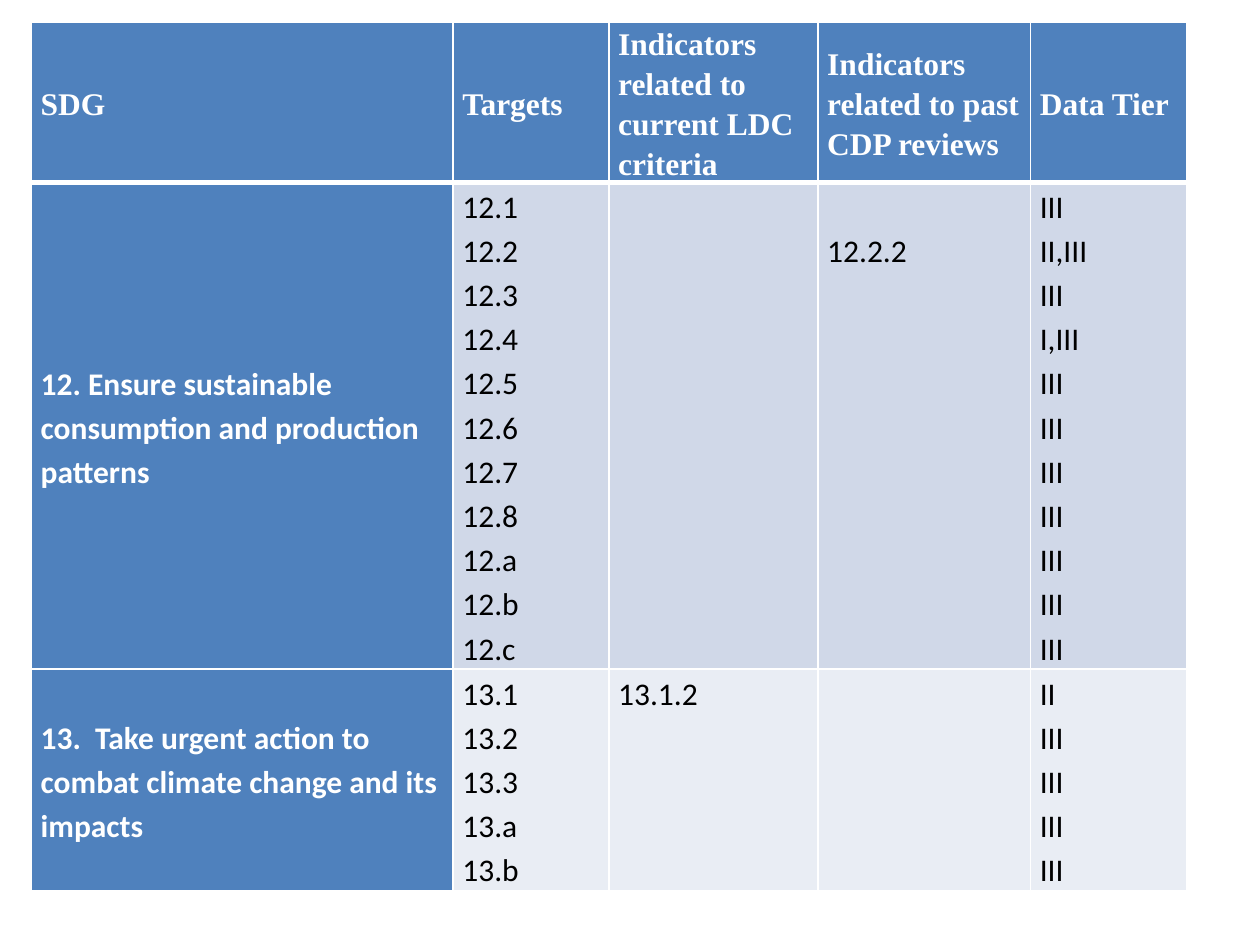
from dataclasses import dataclass

from lxml import etree
from pptx import Presentation
from pptx.dml.color import RGBColor
from pptx.enum import text
from pptx.oxml import ns
from pptx.util import Pt


@dataclass(frozen=True)
class Theme:
    accent: str = "4F81BD"
    bands: tuple = ("D0D8E8", "E9EDF4")
    light: str = "FFFFFF"
    dark: str = "000000"
    head_font: str = "Times New Roman"
    body_font: str = "Calibri"
    size: float = 18
    leading: float = 1.15
    inset: float = 5.3
    rule: float = 1
    head_rule: float = 3


THEME = Theme()
BODY_LINE = 25.3  # height of one body line at THEME.size and THEME.leading
COLUMN_WIDTHS = (241, 89, 119.5, 121.5, 89)
HEADER_HEIGHT = 91

HEADERS = ("SDG", "Targets", "Indicators related to current LDC criteria",
           "Indicators related to past CDP reviews", "Data Tier")
# goal, targets, current indicators, past indicators, data tiers;
# indicators are keyed by the line they stand on
GOALS = (
    ("12. Ensure sustainable consumption and production patterns",
     [f"12.{n}" for n in "12345678abc"], {}, {1: "12.2.2"},
     ["III", "II,III", "III", "I,III"] + ["III"] * 7),
    ("13.  Take urgent action to combat climate change and its impacts",
     [f"13.{n}" for n in "123ab"], {0: "13.1.2"}, {},
     ["II"] + ["III"] * 4),
)


def set_borders(cell, top, bottom):
    """Draw light rules on all four sides, ahead of the fill in the XML."""
    tc_pr = cell._tc.get_or_add_tcPr()
    widths = {"lnL": THEME.rule, "lnR": THEME.rule, "lnT": top, "lnB": bottom}
    for i, (tag, width) in enumerate(widths.items()):
        ln = etree.Element(ns.qn(f"a:{tag}"), w=str(Pt(width)))
        fill = etree.SubElement(ln, ns.qn("a:solidFill"))
        etree.SubElement(fill, ns.qn("a:srgbClr"), val=THEME.light)
        tc_pr.insert(i, ln)


def style_cell(cell, lines, fill, font, heading, first_line=0,
               top=THEME.rule, bottom=THEME.rule):
    cell.fill.solid()
    cell.fill.fore_color.rgb = RGBColor.from_string(fill)
    set_borders(cell, top, bottom)
    cell.margin_left = cell.margin_right = Pt(THEME.inset)
    cell.margin_top, cell.margin_bottom = Pt(first_line * BODY_LINE), 0
    cell.vertical_anchor = (text.MSO_ANCHOR.MIDDLE if heading
                            else text.MSO_ANCHOR.TOP)
    tf = cell.text_frame
    tf.text = "\n".join(lines)
    for p in tf.paragraphs:
        p.line_spacing = THEME.leading
        p.font.size = Pt(THEME.size)
        for r in p.runs:
            r.font.name, r.font.size, r.font.bold = font, Pt(THEME.size), heading
            r.font.color.rgb = RGBColor.from_string(
                THEME.light if heading else THEME.dark)


def fill_goal_row(cells, goal, band, top):
    title, targets, current, past, tiers = goal
    style_cell(cells[0], [title], THEME.accent, THEME.body_font, True, top=top)
    columns = (dict(enumerate(targets)), current, past, dict(enumerate(tiers)))
    for cell, entries in zip(cells[1:], columns):
        style_cell(cell, entries.values(), band, THEME.body_font, False,
                   first_line=min(entries, default=0), top=top)


def add_goal_table(s, left, top):
    heights = [HEADER_HEIGHT] + [len(g[1]) * BODY_LINE for g in GOALS]
    frame = s.shapes.add_table(len(heights), len(COLUMN_WIDTHS), Pt(left), Pt(top),
                               Pt(sum(COLUMN_WIDTHS)), Pt(sum(heights)))
    table = frame.table
    for column, width in zip(table.columns, COLUMN_WIDTHS):
        column.width = Pt(width)
    for row, height in zip(table.rows, heights):
        row.height = Pt(height)
    rows = [list(row.cells) for row in table.rows]
    for cell, label in zip(rows[0], HEADERS):
        style_cell(cell, [label], THEME.accent, THEME.head_font, True,
                   bottom=THEME.head_rule)
    for i, goal in enumerate(GOALS):
        fill_goal_row(rows[i + 1], goal, THEME.bands[i % 2],
                      THEME.rule if i else THEME.head_rule)


def main():
    prs = Presentation()
    prs.slide_width, prs.slide_height = Pt(720), Pt(540)
    s = prs.slides.add_slide(prs.slide_layouts[6])
    add_goal_table(s, 18, 12.5)
    prs.save("out.pptx")


if __name__ == "__main__":
    main()
